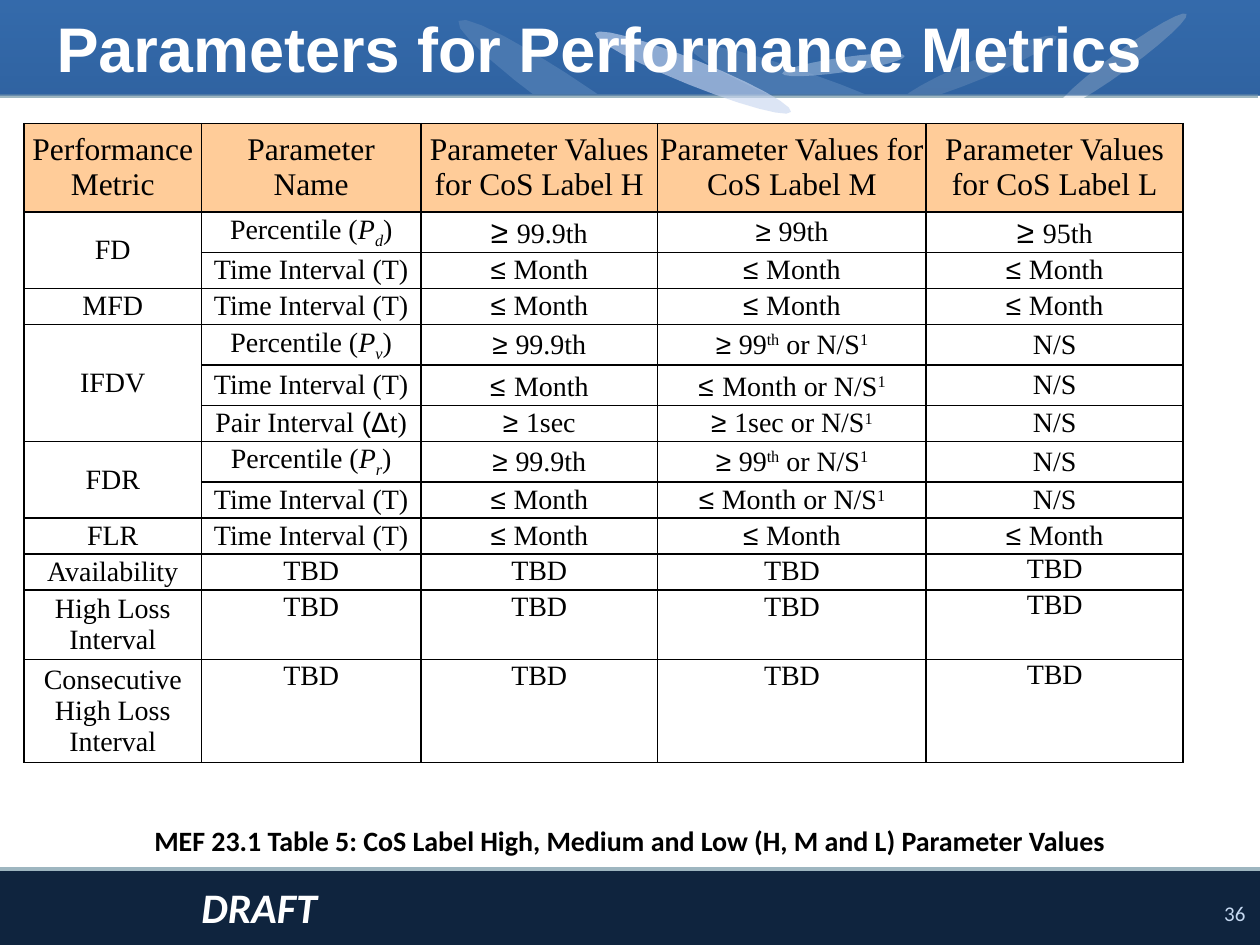
import copy
import math
import pptx
import pptx.util
import pptx.dml.color
import pptx.enum.shapes
import pptx.enum.text
import pptx.oxml
import pptx.oxml.ns

Pt = pptx.util.Pt
Shape = pptx.enum.shapes.MSO_SHAPE
Align = pptx.enum.text.PP_ALIGN
Anchor = pptx.enum.text.MSO_ANCHOR
qn = pptx.oxml.ns.qn
SPACE = pptx.oxml.ns.nsdecls("a")

SERIF, SANS, BODY = "Times New Roman", "Arial", "Calibri"
THEME = {
    "white": "FFFFFF", "black": "000000", "head": "FFCC99", "band": "255997",
    "rule": "9EB6C0", "swoosh": "94B8E4", "pale": "C8D6F0", "mist": "95B3D7",
    "fade": [(0, "0F243E"), (0.5, "10253F"), (1, "548ED5")],
    "title": {"size": Pt(36), "name": SANS, "bold": True, "color": "FFFFFF"},
    "note": {"size": Pt(16), "name": BODY, "bold": True, "color": "000000"},
    "draft": {"size": Pt(24), "name": BODY, "bold": True, "italic": True, "color": "FFFFFF"},
    "page": {"size": Pt(12), "name": BODY, "color": "C6D9F1"},
    "top": {"size": Pt(18), "name": SERIF, "color": "000000"},
    "cell": {"size": Pt(16), "name": SERIF, "color": "000000"},
    # A part of a cell that opens with one of these signs changes the cell style.
    "marks": {
        "/": {"italic": True},
        "_": {"italic": True, "base": -25000},
        "^": {"base": 30000},
        "@": {"name": SANS},
        "#": {"name": SANS, "size": Pt(18)},
    },
}

# Each swoosh: colour, opacity, and its two tips.
SWOOSHES = [
    ("white", 42, (515, 58), (604, 21)),
    ("swoosh", 100, (395, 27), (558, 89)),
    ("swoosh", 100, (262, 12), (412, 116)),
    ("white", 70, (604, 62), (678, 8)),
    ("pale", 62, (340, 19), (452, 64)),
    ("mist", 62, (447, 42), (517, 32)),
]

COLS = [101.5, 125.3, 135.4, 153.4, 146.9]
ROWS = [50.4, 17.3, 20.2, 17.3, 16.6, 17.3, 17.3, 20.2, 20.2, 16.6, 18.7, 36.7, 54.7]
TIME = "Time Interval (T)"
MONTH = "@≤ |Month"
OPEN = ["TBD"] * 4
GRID = [
    ["Performance Metric", "Parameter Name"]
    + [f"Parameter Values for CoS Label {level}" for level in "HML"],
    ["FD", "Percentile (|/P|_d|)", "#≥ |99.9th", "@≥ |99th", "#≥ |95th"],
    [None, TIME, MONTH, MONTH, MONTH],
    ["MFD", TIME, MONTH, MONTH, MONTH],
    ["IFDV", "Percentile (|/P|_v|)", "@≥ |99.9th", "@≥ |99|^th| or N/S|^1", "N/S"],
    [None, TIME, "@≤|# |Month", "@≤|# |Month or N/S|^1", "N/S"],
    [None, "Pair Interval|@ (Δ|t)", "@≥ |1sec", "@≥ |1sec or N/S|^1", "N/S"],
    ["FDR", "Percentile (|/P|_r|)", "@≥ |99.9th", "@≥ |99|^th| or N/S|^1", "N/S"],
    [None, TIME, MONTH, MONTH + " or N/S|^1", "N/S"],
    ["FLR", TIME, MONTH, MONTH, MONTH],
    ["Availability"] + OPEN,
    ["High Loss Interval"] + OPEN,
    ["Consecutive High Loss Interval"] + OPEN,
]


def rgb(code):
    return pptx.dml.color.RGBColor.from_string(code)


def lens(start, end, steps=12):
    """Points around a thin leaf between two tips."""
    (x, y), (dx, dy) = start, (end[0] - start[0], end[1] - start[1])
    slim = 0.06
    out = []
    for n in range(2 * steps):
        turn = math.pi * n / steps
        along, side = (1 - math.cos(turn)) / 2, slim * math.sin(turn)
        out.append((Pt(x + dx * along - dy * side), Pt(y + dy * along + dx * side)))
    return out


class Deck:
    def __init__(self, theme):
        self.theme = theme
        self.file = pptx.Presentation()
        self.file.slide_width, self.file.slide_height = Pt(720), Pt(540)
        self.slide = self.file.slides.add_slide(self.file.slide_layouts[6])
        self.shapes = self.slide.shapes

    def paint(self, shape, color, alpha=100):
        shape.shadow.inherit = False
        shape.line.fill.background()
        shape.fill.solid()
        shape.fill.fore_color.rgb = rgb(self.theme[color])
        if alpha < 100:
            tint = shape._element.spPr.find(qn("a:solidFill")).find(qn("a:srgbClr"))
            tint.append(pptx.oxml.parse_xml(f'<a:alpha {SPACE} val="{alpha * 1000}"/>'))

    def rect(self, box, color, alpha=100):
        shape = self.shapes.add_shape(Shape.RECTANGLE, *map(Pt, box))
        self.paint(shape, color, alpha)
        return shape

    def fade(self, box):
        fill = self.rect(box, "white").fill
        fill.gradient()
        fill.gradient_angle = 90
        first = fill.gradient_stops[0]._gs
        first.addnext(copy.deepcopy(first))
        for stop, (place, code) in zip(fill.gradient_stops, self.theme["fade"]):
            stop.position = place
            stop.color.rgb = rgb(code)

    def swoosh(self, color, alpha, start, end):
        first, *rest = lens(start, end)
        pen = self.shapes.build_freeform(*first, scale=1.0)
        pen.add_line_segments(rest, close=True)
        self.paint(pen.convert_to_shape(), color, alpha)

    def rule(self, left, right, y):
        line = self.shapes.add_connector(
            pptx.enum.shapes.MSO_CONNECTOR.STRAIGHT, Pt(left), Pt(y), Pt(right), Pt(y))
        line.line.color.rgb = rgb(self.theme["rule"])
        line.line.width = Pt(2.25)
        line._element.spPr.append(pptx.oxml.parse_xml(f"<a:effectLst {SPACE}/>"))

    def run(self, para, text, style):
        run = para.add_run()
        run.text = text
        for key, value in style.items():
            if key == "color":
                run.font.color.rgb = rgb(value)
            elif key == "base":
                run._r.get_or_add_rPr().set("baseline", str(value))
            else:
                setattr(run.font, key, value)

    def text(self, box, words, style, align=Align.LEFT, anchor=Anchor.TOP, wrap=True):
        frame = self.shapes.add_textbox(*map(Pt, box)).text_frame
        frame.word_wrap, frame.vertical_anchor = wrap, anchor
        frame.paragraphs[0].alignment = align
        self.run(frame.paragraphs[0], words, self.theme[style])

    def cell(self, cell, words, style, form):
        """Fill one table cell; parts of words are split by bars."""
        for key, value in form.items():
            setattr(cell, key, value)
        para = cell.text_frame.paragraphs[0]
        para.alignment = Align.CENTER
        for part in words.split("|") if words else ():
            mark = self.theme["marks"].get(part[0])
            self.run(para, part[1:] if mark else part, self.theme[style] | (mark or {}))
        for side in "LRTB":
            cell._tc.get_or_add_tcPr().append(pptx.oxml.parse_xml(
                f'<a:ln{side} {SPACE} w="{Pt(1)}"><a:solidFill>'
                f'<a:srgbClr val="{self.theme["black"]}"/></a:solidFill></a:ln{side}>'))

    def table(self, left, top, grid, cols, rows):
        box = map(Pt, (left, top, sum(cols), sum(rows)))
        table = self.shapes.add_table(len(rows), len(cols), *box).table
        table.first_row = table.horz_banding = False
        for col, width in zip(table.columns, cols):
            col.width = Pt(width)
        for r, (row, height) in enumerate(zip(grid, rows)):
            table.rows[r].height = Pt(height)
            for c, words in enumerate(row):
                cell = table.cell(r, c)
                tight = c == 4 or (r, c) == (0, 3)
                side, edge = (0, 0) if tight else (Pt(3.6), Pt(0.7))
                self.cell(cell, words, "cell" if r else "top", {
                    "margin_left": side, "margin_right": side,
                    "margin_top": edge, "margin_bottom": edge,
                    "vertical_anchor": Anchor.TOP if words == "TBD" else Anchor.MIDDLE})
                if r:
                    cell.fill.background()
                else:
                    cell.fill.solid()
                    cell.fill.fore_color.rgb = rgb(self.theme["head"])
        starts = [r for r, row in enumerate(grid) if row[0]] + [len(grid)]
        for first, after in zip(starts, starts[1:]):
            if after - first > 1:
                table.cell(first, 0).merge(table.cell(after - 1, 0))


def main():
    deck = Deck(THEME)
    deck.fade((0, 0, 720, 540))
    for swoosh in SWOOSHES[:3]:
        deck.swoosh(*swoosh)
    deck.rect((0, 54.7, 720, 442.1), "white")
    deck.rule(-1.4, 718.6, 54.7)
    deck.rule(0, 720, 496.8)
    deck.swoosh(*SWOOSHES[3])
    deck.rect((0, 0, 720, 54.7), "band", 67)
    deck.text((691.2, 511.2, 28.8, 21.6), "36", "page", Align.CENTER, wrap=False)
    for swoosh in SWOOSHES[4:]:
        deck.swoosh(*swoosh)
    deck.text((25.2, 0, 694.8, 54), "Parameters for Performance Metrics", "title",
              anchor=Anchor.MIDDLE)
    deck.text((0, 467.3, 720, 26.6), "MEF 23.1 Table 5: CoS Label High, Medium and Low "
              "(H, M and L) Parameter Values", "note", Align.CENTER)
    deck.text((108, 500.4, 96.5, 36.7), "DRAFT", "draft", wrap=False)
    deck.table(13.7, 70.6, GRID, COLS, ROWS)
    deck.file.save("out.pptx")


if __name__ == "__main__":
    main()
